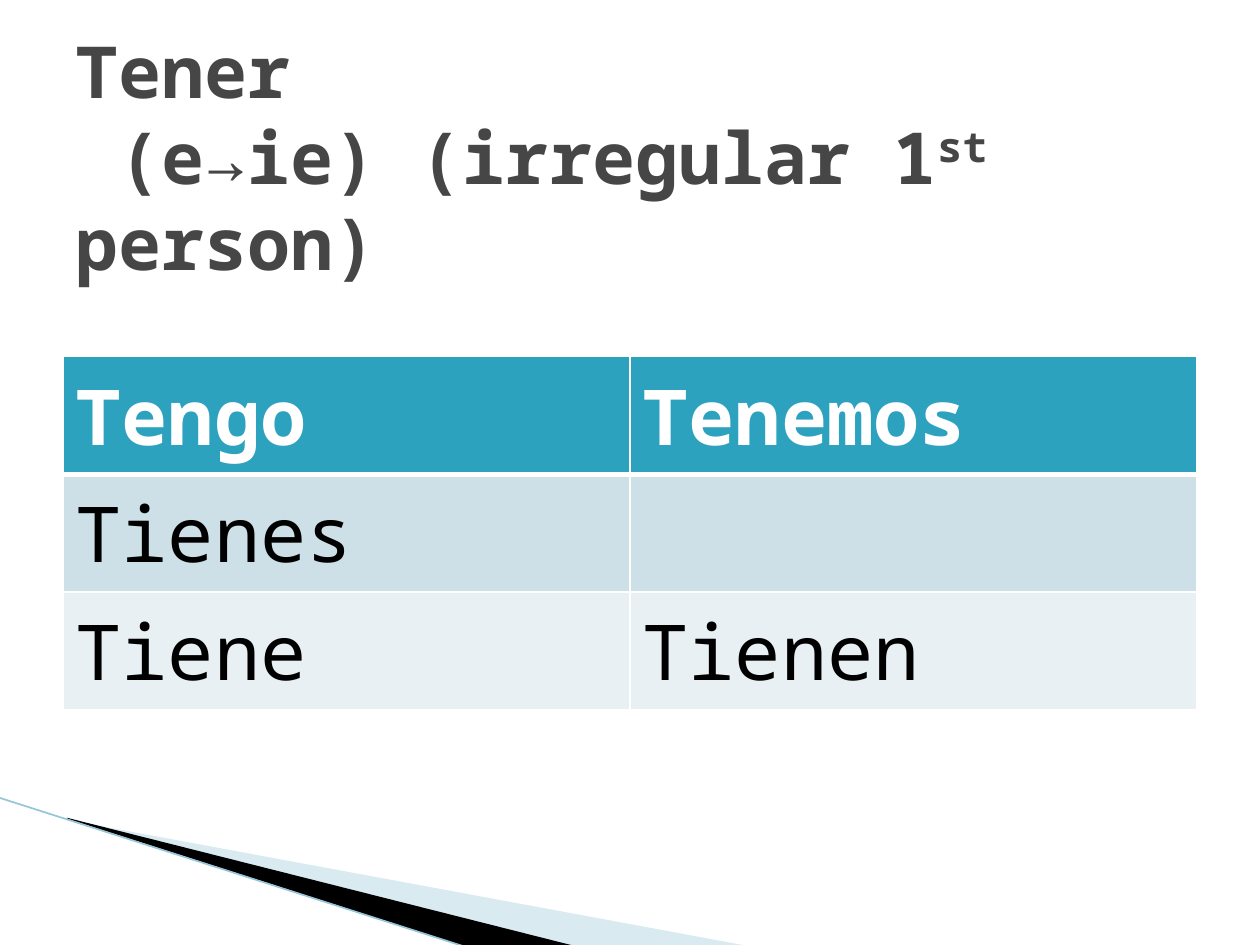
from dataclasses import dataclass

from lxml.etree import SubElement
from pptx import Presentation
from pptx.dml.color import RGBColor as Color
from pptx.enum.shapes import MSO_CONNECTOR as Connector
from pptx.enum.text import MSO_ANCHOR as Anchor, MSO_AUTO_SIZE as AutoSize, PP_ALIGN as Align
from pptx.oxml import parse_xml
from pptx.oxml.ns import nsdecls, qn
from pptx.util import Inches, Pt


@dataclass(frozen=True)
class Theme:
    """Colours, font and sizes of the slide."""
    font: str = "Noto Sans Mono"
    title_size: float = 41
    cell_size: float = 44
    title: str = "464646"
    white: str = "FFFFFF"
    black: str = "000000"
    header: str = "2DA2BF"
    bands: tuple = ("CDE0E8", "E8F0F4")
    pale_wedge: str = "A0CBDC"
    edge: str = "97C5D8"


THEME = Theme()
VERB_FORMS = [("Tengo", "Tenemos"), ("Tienes", ""), ("Tiene", "Tienen")]


def apply(target, values):
    """Set each named attribute on the target."""
    for name, value in values.items():
        setattr(target, name, value)


def style_font(font, size, color, bold):
    """Give a font the theme face with a size, colour and weight."""
    apply(font, {"name": THEME.font, "size": Pt(size), "bold": bold})
    font.color.rgb = Color.from_string(color)


def add_wedge(page, box, points, color, alpha=None):
    """Draw a filled outline whose points are offsets in inches from the box."""
    left, top = box
    corners = [(Inches(left + x), Inches(top + y)) for x, y in points]
    builder = page.shapes.build_freeform(*corners[0], scale=1.0)
    builder.add_line_segments(corners[1:], close=True)
    wedge = builder.convert_to_shape()
    wedge.shadow.inherit = False
    wedge.fill.solid()
    wedge.fill.fore_color.rgb = Color.from_string(color)
    wedge.line.fill.background()
    if alpha is not None:
        tint = wedge.fill._xPr.find(".//" + qn("a:srgbClr"))
        SubElement(tint, qn("a:alpha"), val=str(alpha * 1000))


def add_corner(page, box):
    """Draw the two wedges and the edge line in the lower left corner."""
    left, top = box
    add_wedge(page, (left + 0.56, top + 0.17),
              [(0, 0.01), (5.4, 1.01), (4.01, 1.01), (0, 0)], THEME.pale_wedge, 40)
    add_wedge(page, (left + 0.54, top + 0.16),
              [(0, 0), (4.04, 1.02), (3.19, 1.03), (0.01, 0.01)], THEME.black)
    edge = page.shapes.add_connector(
        Connector.STRAIGHT, Inches(left), Inches(top), Inches(left + 3.72), Inches(top + 1.19))
    edge.line.width = Pt(0.95)
    edge.line.color.rgb = Color.from_string(THEME.edge)
    SubElement(edge._element.spPr, qn("a:effectLst"))


def set_title(page, box):
    """Place the title and raise its ordinal ending."""
    title = page.shapes.title
    apply(title, dict(zip(("left", "top", "width", "height"), map(Inches, box))))
    apply(title.text_frame, {"word_wrap": True, "auto_size": AutoSize.NONE,
                             "vertical_anchor": Anchor.MIDDLE})
    para = title.text_frame.paragraphs[0]
    para.alignment = Align.LEFT
    for text, raised in [("Tener", False), (" (e→ie) (irregular 1", False),
                         ("st", True), (" person)", False)]:
        span = para.add_run()
        span.text = text
        style_font(span.font, THEME.title_size, THEME.title, True)
        if raised:
            span._r.get_or_add_rPr().set("baseline", "30000")
        if text == "Tener":
            para.add_line_break()
    for line_break in para._p.findall(qn("a:br")):
        SubElement(line_break, qn("a:rPr"), sz=str(THEME.title_size * 100), b="1")


def add_borders(cell, widths):
    """Line the four sides of a cell in white, with widths in points."""
    properties = cell._tc.get_or_add_tcPr()
    for index, (side, width) in enumerate(widths.items()):
        properties.insert(index, parse_xml(
            f'<a:ln{side} {nsdecls("a")} w="{Pt(width)}"><a:solidFill>'
            f'<a:srgbClr val="{THEME.white}"/></a:solidFill></a:ln{side}>'))


def add_verb_table(page, box):
    """Place the table of verb forms with a header row and two bands."""
    frame = page.shapes.add_table(len(VERB_FORMS), 2, *map(Inches, box))
    table = frame.table
    for row, forms in enumerate(VERB_FORMS):
        table.rows[row].height = Inches(0.41)
        is_header = row == 0
        fill = THEME.header if is_header else THEME.bands[row - 1]
        for column, form in enumerate(forms):
            cell = table.cell(row, column)
            cell.fill.solid()
            cell.fill.fore_color.rgb = Color.from_string(fill)
            add_borders(cell, {"L": 1, "R": 1, "T": 3 if row == 1 else 1,
                               "B": 3 if is_header else 1})
            if form:
                span = cell.text_frame.paragraphs[0].add_run()
                span.text = form
                style_font(span.font, THEME.cell_size,
                           THEME.white if is_header else THEME.black, is_header)
    frame.height = Inches(box[3])


def main():
    """Build the slide and save it."""
    deck = Presentation()
    apply(deck, {"slide_width": Inches(10), "slide_height": Inches(7.5)})
    page = deck.slides.add_slide(deck.slide_layouts[5])
    add_corner(page, (-0.01, 6.33))
    add_verb_table(page, (0.5, 2.83, 9, 2.5))
    set_title(page, (0.5, 0.3, 9, 1.87))
    deck.save("out.pptx")


if __name__ == "__main__":
    main()
